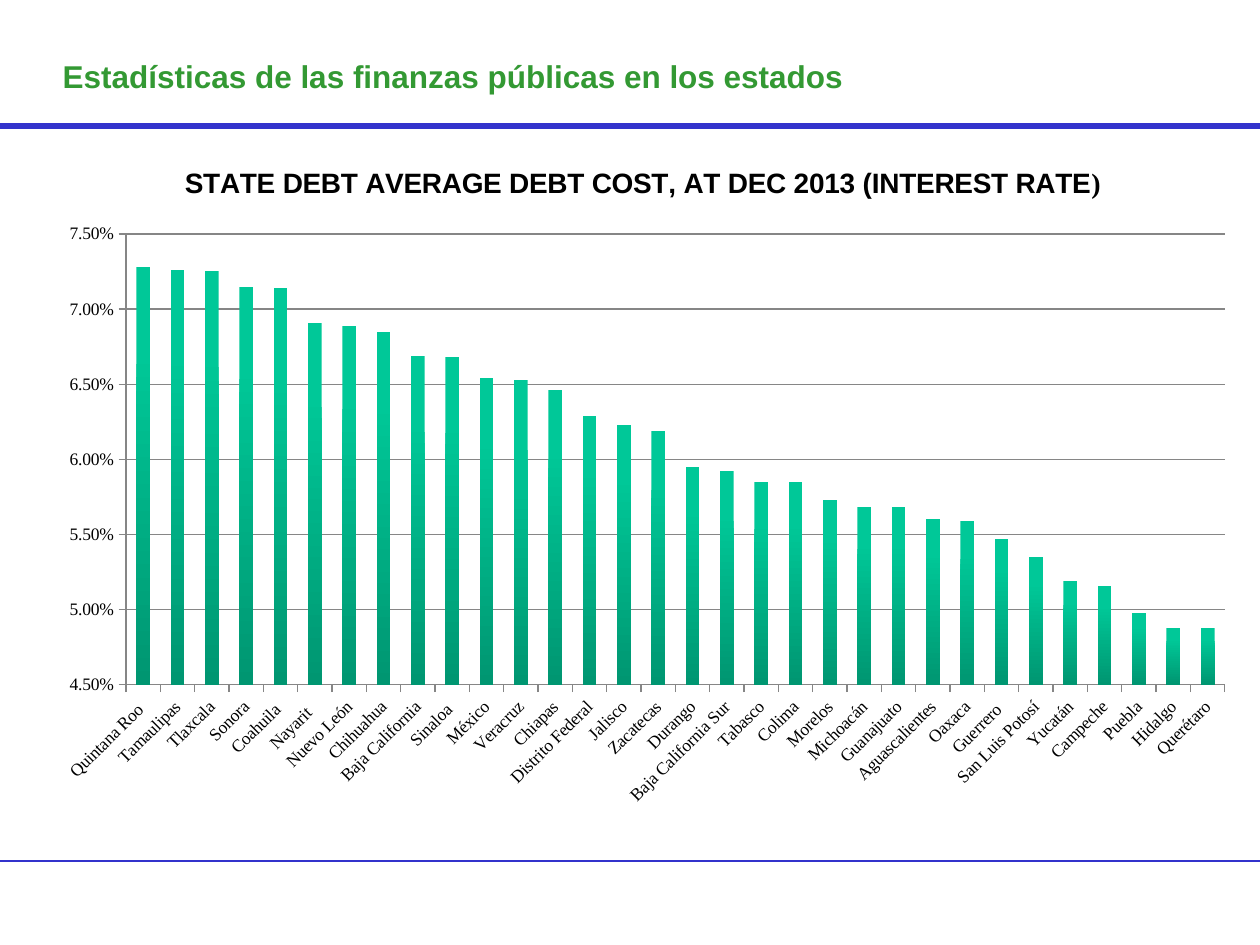
from lxml import etree
from pptx import Presentation
from pptx.chart.data import CategoryChartData
from pptx.dml.color import RGBColor
from pptx.enum.chart import XL_CHART_TYPE, XL_TICK_MARK
from pptx.enum.shapes import MSO_CONNECTOR
from pptx.enum.text import MSO_ANCHOR, PP_ALIGN
from pptx.oxml import parse_xml
from pptx.oxml.ns import nsdecls, qn
from pptx.util import Pt

COLUMN = XL_CHART_TYPE.COLUMN_CLUSTERED
STRAIGHT = MSO_CONNECTOR.STRAIGHT
OUT, NONE = XL_TICK_MARK.OUTSIDE, XL_TICK_MARK.NONE
MIDDLE, LEFT = MSO_ANCHOR.MIDDLE, PP_ALIGN.LEFT
SANS, SERIF = "Arial", "Times New Roman"
PX = 914400 // 126
WIDTH, HEIGHT = 1260, 945

TITLE = "Estadísticas de las finanzas públicas en los estados"
HEADING = [("STATE DEBT AVERAGE DEBT COST, AT DEC 2013 (INTEREST RATE", SANS),
           (")", SERIF)]
RULES = [(861, 1.5), (126, 3)]  # y in px, weight in points
RATES = [
    ("Quintana Roo ", 7.28), ("Tamaulipas", 7.26), ("Tlaxcala", 7.25),
    ("Sonora", 7.15), ("Coahuila ", 7.14), ("Nayarit  ", 6.91),
    ("Nuevo León", 6.89), ("Chihuahua", 6.85), ("Baja California", 6.69),
    ("Sinaloa ", 6.68), ("México", 6.54), ("Veracruz", 6.53),
    ("Chiapas", 6.46), ("Distrito Federal", 6.29), ("Jalisco", 6.23),
    ("Zacatecas", 6.19), ("Durango", 5.95), ("Baja California Sur", 5.92),
    ("Tabasco", 5.85), ("Colima", 5.85), ("Morelos", 5.73),
    ("Michoacán", 5.68), ("Guanajuato", 5.68), ("Aguascalientes", 5.60),
    ("Oaxaca", 5.59), ("Guerrero ", 5.47), ("San Luis Potosí", 5.35),
    ("Yucatán", 5.19), ("Campeche", 5.16), ("Puebla", 4.98),
    ("Hidalgo", 4.88), ("Querétaro", 4.88),
]
CHART = (42, 147, 1207, 672)
PLOT = (126, 234, 1099, 451)
HEAD = (181, 162)


def px(*nums):
    return [n * PX for n in nums]


def style(font, face, size, color, bold=False):
    font.name, font.size, font.bold = face, Pt(size), bold
    font.color.rgb = RGBColor.from_string(color)


def add_rule(slide, y, weight):
    rule = slide.shapes.add_connector(STRAIGHT, *px(0, y, WIDTH, y))
    rule.line.color.rgb = RGBColor.from_string("3333CC")
    rule.line.width = Pt(weight)
    etree.SubElement(rule.element.spPr, qn("a:effectLst"))


def add_title(slide):
    title = slide.shapes.title
    title.left, title.top, title.width, title.height = px(50, 40, 998, 72)
    frame = title.text_frame
    frame.word_wrap = False
    frame.vertical_anchor = MIDDLE
    para = frame.paragraphs[0]
    para.alignment = LEFT
    run = para.add_run()
    run.text = TITLE
    style(run.font, SANS, 18, "339933", True)


def place(part, index, box, target=""):
    """Fix a chart part at a px box, as fractions of the chart frame."""
    left, top, wide, high = CHART
    x, y, *size = box
    spots = [(x - left) / wide, (y - top) / high]
    spots += [length / full for length, full in zip(size, (wide, high))]
    modes = "".join(f'<c:{k}Mode val="edge"/>' for k in "xy")
    sizes = "".join(f'<c:{k} val="{v:.4f}"/>' for k, v in zip("xywh", spots))
    old = part.find(qn("c:layout"))
    if old is not None:
        part.remove(old)
    part.insert(index, parse_xml(
        f'<c:layout {nsdecls("c")}><c:manualLayout>'
        f'{target}{modes}{sizes}</c:manualLayout></c:layout>'))


def style_axes(chart):
    cat, val = chart.category_axis, chart.value_axis
    val.minimum_scale, val.maximum_scale = 0.045, 0.075
    val.major_unit = 0.005
    val.tick_labels.number_format = "0.00%"
    val.tick_labels.number_format_is_linked = False
    val.has_major_gridlines = True
    for axis in (cat, val):
        axis.major_tick_mark, axis.minor_tick_mark = OUT, NONE
        style(axis.tick_labels.font, SERIF, 10, "000000")
    for line in (cat.format.line, val.format.line,
                 val.major_gridlines.format.line):
        line.color.rgb = RGBColor.from_string("868686")
        line.width = Pt(0.75)
    body = cat.tick_labels.font._element.getparent().getparent().getparent()
    body.find(qn("a:bodyPr")).set("rot", "-2700000")


def add_heading(chart):
    chart.has_title = True
    title = chart.chart_title
    para = title.text_frame.paragraphs[0]
    for text, face in HEADING:
        run = para.add_run()
        run.text = text
        style(run.font, face, 16, "000000", True)
    title.include_in_layout = False
    place(chart.element.find(".//" + qn("c:title")), 1, HEAD)


def add_chart(slide):
    data = CategoryChartData(number_format="0.00%")
    data.categories = [name for name, _ in RATES]
    data.add_series("Series 1", [round(rate / 100, 4) for _, rate in RATES])
    chart = slide.shapes.add_chart(COLUMN, *px(*CHART), data).chart
    style(chart.font, SERIF, 10, "000000")
    chart.has_legend = False
    add_heading(chart)

    plot = chart.plots[0]
    plot.gap_width, plot.vary_by_categories = 150, False
    fill = plot.series[0].format.fill
    fill.gradient()
    fill.gradient_angle = 270
    stops = [("00C898", 0.2), ("009671", 1)]
    for stop, (color, spot) in zip(fill.gradient_stops, stops):
        stop.color.rgb = RGBColor.from_string(color)
        stop.position = spot
    style_axes(chart)
    area = chart.element.find(".//" + qn("c:plotArea"))
    place(area, 0, PLOT, '<c:layoutTarget val="inner"/>')


def main():
    deck = Presentation()
    deck.slide_width, deck.slide_height = px(WIDTH, HEIGHT)
    slide = deck.slides.add_slide(deck.slide_layouts[5])
    for y, weight in RULES:
        add_rule(slide, y, weight)
    add_title(slide)
    add_chart(slide)
    deck.save("out.pptx")


if __name__ == "__main__":
    main()
